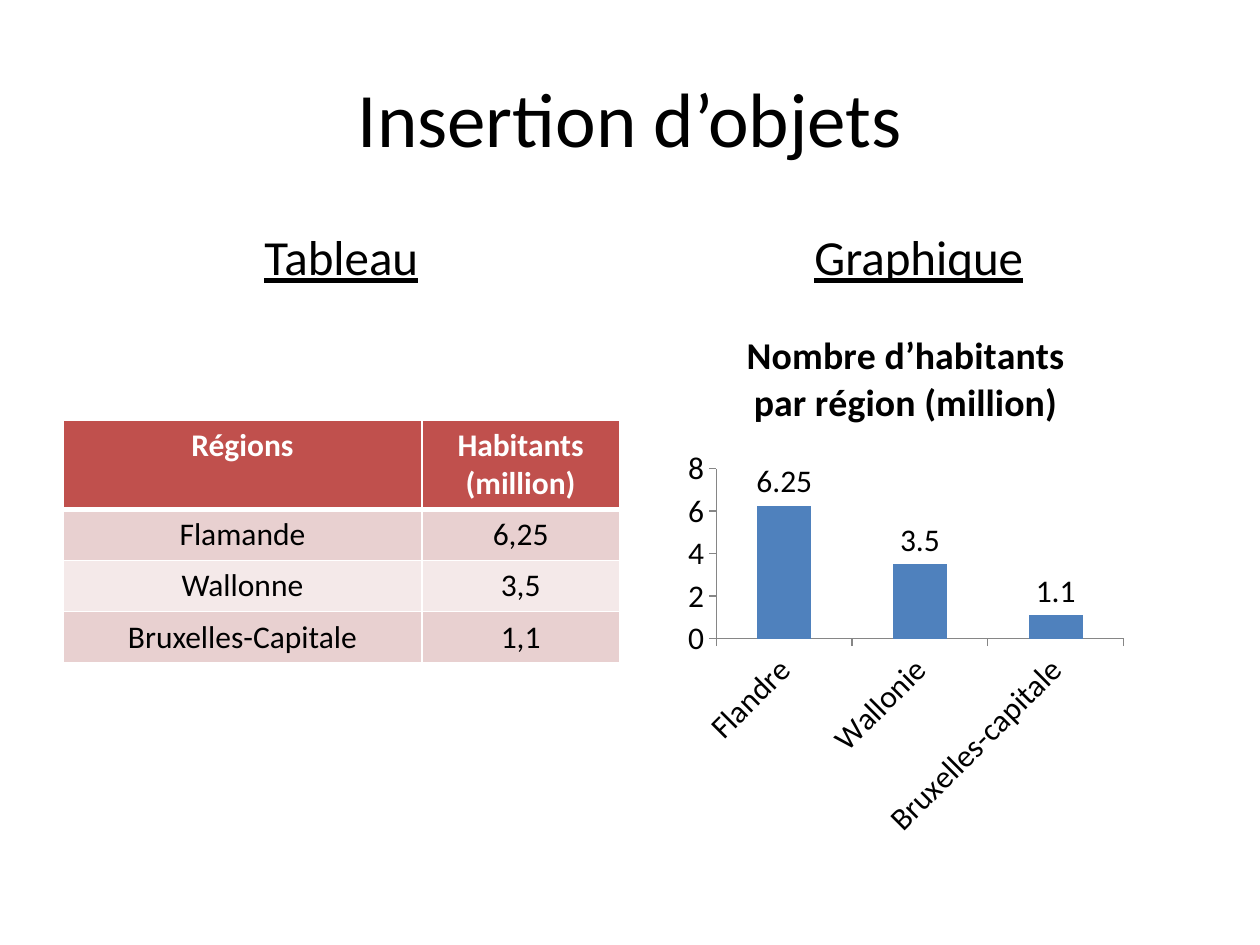
from lxml.etree import SubElement
from pptx import Presentation
from pptx.chart.data import CategoryChartData
from pptx.dml.color import RGBColor
from pptx.enum.chart import XL_CHART_TYPE, XL_LABEL_POSITION, XL_TICK_MARK
from pptx.enum.text import MSO_ANCHOR, PP_ALIGN
from pptx.oxml.ns import qn
from pptx.util import Pt

COLORS = {
    "text": "000000",
    "white": "FFFFFF",
    "header": "C0504D",
    "band_dark": "E8D0D0",
    "band_light": "F4E9E9",
    "bars": "4F81BD",
    "axis": "868686",
}
FONT = "Calibri"

TITLE_BOX = (36, 21.6, 648, 90)
TABLE_HEADING_BOX = (36, 126, 318, 356.4)
CHART_HEADING_BOX = (366, 126, 318, 356.4)
TABLE_BOX = (36, 240, 318, 116.8)
CHART_BOX = (388, 173.5, 259.2, 311.8)

REGIONS = [
    ("Régions", "Habitants (million)"),
    ("Flamande", "6,25"),
    ("Wallonne", "3,5"),
    ("Bruxelles-Capitale", "1,1"),
]
REGION_COLUMN_SHARE = 0.645
INHABITANTS = {"Flandre": 6.25, "Wallonie": 3.5, "Bruxelles-capitale": 1.1}


def rgb(name):
    return RGBColor.from_string(COLORS[name])


def format_font(font, color="text", **values):
    font.color.rgb = rgb(color)
    for attribute, value in {"name": FONT, **values}.items():
        setattr(font, attribute, value)


def place(placeholder, box):
    for attribute, length in zip(("left", "top", "width", "height"), box):
        setattr(placeholder, attribute, Pt(length))


def write_heading(placeholder, box, text, **font_values):
    place(placeholder, box)
    placeholder.text_frame.text = text
    paragraph = placeholder.text_frame.paragraphs[0]
    paragraph.alignment = PP_ALIGN.CENTER
    format_font(paragraph.runs[0].font, **font_values)
    return paragraph


def write_column_heading(placeholder, box, text):
    paragraph = write_heading(placeholder, box, text, size=Pt(28), underline=True)
    SubElement(paragraph._p.get_or_add_pPr(), qn("a:buNone"))


def set_borders(cell, widths):
    """Draw white borders; widths maps each side's XML tag to points."""
    properties = cell._tc.get_or_add_tcPr()
    for position, (side, width) in enumerate(widths.items()):
        border = properties.makeelement(qn(f"a:{side}"), {"w": str(Pt(width))})
        border_fill = SubElement(border, qn("a:solidFill"))
        SubElement(border_fill, qn("a:srgbClr"), val=COLORS["white"])
        properties.insert(position, border)


def add_region_table(slide, box):
    left, top, width, height = map(Pt, box)
    table = slide.shapes.add_table(
        len(REGIONS), len(REGIONS[0]), left, top, width, height
    ).table
    table.columns[0].width = int(width * REGION_COLUMN_SHARE)
    table.columns[1].width = width - table.columns[0].width
    for row, texts in enumerate(REGIONS):
        is_header = row == 0
        band = "header" if is_header else ("band_light", "band_dark")[row % 2]
        for column, text in enumerate(texts):
            cell = table.cell(row, column)
            cell.text = text
            cell.fill.solid()
            cell.fill.fore_color.rgb = rgb(band)
            paragraph = cell.text_frame.paragraphs[0]
            paragraph.alignment = PP_ALIGN.CENTER
            format_font(
                paragraph.runs[0].font,
                color="white" if is_header else "text",
                size=Pt(18),
                bold=is_header,
            )
            set_borders(cell, {
                "lnL": 1,
                "lnR": 1,
                "lnT": 3 if row == 1 else 1,
                "lnB": 3 if is_header else 1,
            })


def add_inhabitants_chart(slide, box):
    data = CategoryChartData()
    data.categories = list(INHABITANTS)
    data.add_series("Series 1", list(INHABITANTS.values()))
    chart = slide.shapes.add_chart(
        XL_CHART_TYPE.COLUMN_CLUSTERED, *map(Pt, box), data
    ).chart
    format_font(chart.font, size=Pt(18))
    chart.has_legend = False

    chart.has_title = True
    title_frame = chart.chart_title.text_frame
    title_frame.text = "Nombre d’habitants par région (million)"
    format_font(title_frame.paragraphs[0].runs[0].font, size=Pt(21.6), bold=True)

    for axis in (chart.category_axis, chart.value_axis):
        axis.has_major_gridlines = False
        axis.major_tick_mark = XL_TICK_MARK.OUTSIDE
        axis.format.line.color.rgb = rgb("axis")
    chart.value_axis.major_unit = 2

    plot = chart.plots[0]
    plot.gap_width = 150
    plot.vary_by_categories = False
    bars = plot.series[0].format.fill
    bars.solid()
    bars.fore_color.rgb = rgb("bars")
    plot.has_data_labels = True
    plot.data_labels.show_value = True
    plot.data_labels.position = XL_LABEL_POSITION.OUTSIDE_END


def main():
    presentation = Presentation()
    presentation.slide_width, presentation.slide_height = Pt(720), Pt(540)
    two_content_layout = presentation.slide_layouts[3]
    slide = presentation.slides.add_slide(two_content_layout)
    title, table_heading, chart_heading = slide.placeholders

    write_heading(title, TITLE_BOX, "Insertion d’objets", size=Pt(44))
    title.text_frame.vertical_anchor = MSO_ANCHOR.MIDDLE
    write_column_heading(table_heading, TABLE_HEADING_BOX, "Tableau")
    write_column_heading(chart_heading, CHART_HEADING_BOX, "Graphique")
    add_region_table(slide, TABLE_BOX)
    add_inhabitants_chart(slide, CHART_BOX)
    presentation.save("out.pptx")


if __name__ == "__main__":
    main()
